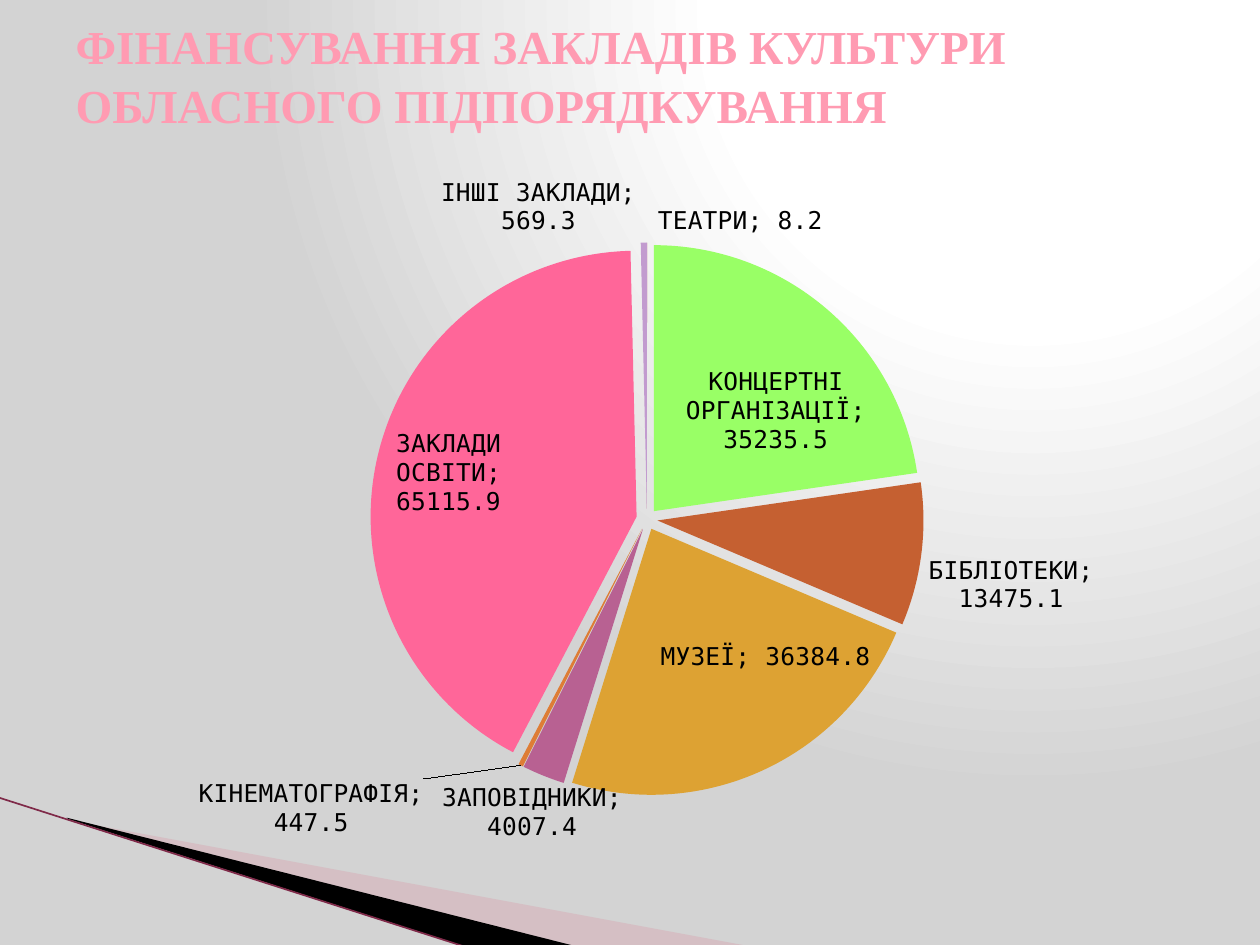
from dataclasses import dataclass

from lxml.etree import SubElement
from pptx import Presentation
from pptx.chart.data import CategoryChartData
from pptx.dml.color import RGBColor as RGB
from pptx.enum.chart import XL_CHART_TYPE as ChartType, XL_LABEL_POSITION as Pos
from pptx.enum.shapes import MSO_CONNECTOR as Conn
from pptx.enum.text import MSO_ANCHOR as Anchor, PP_ALIGN as Align
from pptx.oxml import parse_xml
from pptx.oxml.ns import nsdecls, qn
from pptx.util import Inches, Pt

COLS, ROWS = 100, 75


@dataclass(frozen=True)
class Theme:
    title_font: str = "Times New Roman"
    chart_font: str = "DejaVu Sans Mono"
    title_size: float = 27
    chart_size: float = 18
    label_size: float = 14
    title: str = "FF9BB2"
    text: str = "000000"
    bg_light: str = "FFFFFF"
    bg_dark: str = "D3D3D3"
    wedge_soft: str = "D8A3AF"
    wedge_dark: str = "000000"
    edge: str = "7F2A49"


@dataclass(frozen=True)
class Slice:
    """One pie slice; dx and dy move its label by shares of the chart."""
    name: str
    value: float
    color: str
    pos: Pos = Pos.OUTSIDE_END
    dx: float = 0
    dy: float = 0


SLICES = [
    Slice("ТЕАТРИ", 8.2, "B83D68", dx=0.08),
    Slice("КОНЦЕРТНІ ОРГАНІЗАЦІЇ", 35235.5, "99FF66", Pos.CENTER, 0.03),
    Slice("БІБЛІОТЕКИ", 13475.1, "C56031"),
    Slice("МУЗЕЇ", 36384.8, "DDA233", Pos.CENTER, 0.05, 0.01),
    Slice("ЗАПОВІДНИКИ", 4007.4, "B86192", dx=0.07),
    Slice("КІНЕМАТОГРАФІЯ", 447.5, "DE7D36", dx=-0.08, dy=0.01),
    Slice("ЗАКЛАДИ ОСВІТИ", 65115.9, "FF6699", Pos.CENTER, -0.05, -0.02),
    Slice("ІНШІ ЗАКЛАДИ", 569.3, "C29BCF", dx=-0.09),
]


def layout_xml(inner=False, **shares):
    """Manual chart layout from shares of the chart's size."""
    target = '<c:layoutTarget val="inner"/>' if inner else ""
    modes = '<c:xMode val="edge"/><c:yMode val="edge"/>' if inner else ""
    values = "".join(f'<c:{k} val="{v}"/>' for k, v in shares.items())
    return parse_xml(f'<c:layout {nsdecls("c")}><c:manualLayout>{target}{modes}'
                     f'{values}</c:manualLayout></c:layout>')


class Deck:
    def __init__(self, theme):
        self.theme = theme
        self.prs = Presentation()
        self.prs.slide_width, self.prs.slide_height = Inches(10), Inches(7.5)
        self.slide = self.prs.slides.add_slide(self.prs.slide_layouts[5])

    def x(self, cols):
        return round(self.prs.slide_width * cols / COLS)

    def y(self, rows):
        return round(self.prs.slide_height * rows / ROWS)

    def box(self, x, y, w, h):
        return self.x(x), self.y(y), self.x(w), self.y(h)

    def background(self):
        t = self.theme
        stops = "".join(
            f'<a:gs pos="{pos}000"><a:srgbClr val="{c}"/></a:gs>'
            for pos, c in ((0, t.bg_light), (40, t.bg_light), (100, t.bg_dark)))
        bg = parse_xml(
            f'<p:bg {nsdecls("p", "a")}><p:bgPr><a:gradFill rotWithShape="1">'
            f'<a:gsLst>{stops}</a:gsLst><a:path path="circle">'
            '<a:fillToRect l="65000" t="0" r="0" b="98000"/></a:path>'
            '</a:gradFill><a:effectLst/></p:bgPr></p:bg>')
        self.slide.element.cSld.insert(0, bg)

    def wedge(self, points, color, opacity=100):
        corners = [(self.x(a), self.y(b)) for a, b in points]
        fb = self.slide.shapes.build_freeform(*corners[0])
        fb.add_line_segments(corners[1:], close=True)
        sp = fb.convert_to_shape()
        sp.shadow.inherit = False
        sp.line.fill.background()
        sp.fill.solid()
        sp.fill.fore_color.rgb = RGB.from_string(color)
        if opacity < 100:
            clr = sp.fill._xPr.find(f'.//{qn("a:srgbClr")}')
            SubElement(clr, qn("a:alpha"), val=f"{opacity}000")

    def line(self, start, end, color, width):
        ln = self.slide.shapes.add_connector(
            Conn.STRAIGHT, self.x(start[0]), self.y(start[1]),
            self.x(end[0]), self.y(end[1]))
        ln.line.color.rgb = RGB.from_string(color)
        ln.line.width = Pt(width)
        SubElement(ln._element.spPr, qn("a:effectLst"))

    def font(self, font, name, size, color, bold=False):
        font.name, font.size, font.bold = name, Pt(size), bold
        font.color.rgb = RGB.from_string(color)

    def title(self, text, *cells):
        t, sp = self.theme, self.slide.shapes.title
        sp.left, sp.top, sp.width, sp.height = self.box(*cells)
        tf = sp.text_frame
        tf.word_wrap, tf.vertical_anchor = True, Anchor.MIDDLE
        p = tf.paragraphs[0]
        p.alignment, p.line_spacing = Align.LEFT, 1.05
        r = p.add_run()
        r.text = text
        self.font(r.font, t.title_font, t.title_size, t.title, True)

    def pie(self, slices, *cells, plot, explosion):
        t = self.theme
        data = CategoryChartData(number_format="General")
        data.categories = [s.name for s in slices]
        data.add_series("Series 1", [s.value for s in slices])
        chart = self.slide.shapes.add_chart(
            ChartType.PIE, *self.box(*cells), data).chart
        chart.has_legend = chart.has_title = False
        self.font(chart.font, t.chart_font, t.chart_size, t.text)
        area = chart._chartSpace.chart.plotArea
        for old in area.findall(qn("c:layout")):
            area.remove(old)
        area.insert(0, layout_xml(True, **plot))

        pie = chart.plots[0]
        pie.vary_by_categories = True
        series = pie.series[0]
        labels = series.data_labels
        labels.show_value = labels.show_category_name = True
        self.font(labels.font, t.chart_font, t.label_size, t.text)
        for i, s in enumerate(slices):
            point = series.points[i]
            point.format.fill.solid()
            point.format.fill.fore_color.rgb = RGB.from_string(s.color)
            point.format.line.fill.background()
            self.slice_label(series, i, s)
        ser = series._element
        ser.find(qn("c:dPt")).addprevious(
            parse_xml(f'<c:explosion {nsdecls("c")} val="{explosion}"/>'))
        for dpt in ser.findall(qn("c:dPt")):
            dpt.find(qn("c:spPr")).addprevious(
                parse_xml(f'<c:explosion {nsdecls("c")} val="{explosion}"/>'))

    def slice_label(self, series, index, s):
        t, label = self.theme, series.points[index].data_label
        self.font(label.font, t.chart_font, t.label_size, t.text)
        label.position = s.pos
        dlbl = series._element.xpath(f'.//c:dLbl[c:idx/@val="{index}"]')[0]
        dlbl.find(qn("c:showCatName")).set("val", "1")
        separator = SubElement(dlbl, qn("c:separator"))
        separator.text = "; "
        if s.dx or s.dy:
            dlbl.find(qn("c:idx")).addnext(layout_xml(x=s.dx, y=s.dy))


def main():
    theme = Theme()
    deck = Deck(theme)
    deck.background()
    deck.wedge([(5.5, 65.1), (59.5, 75.1), (45.6, 75.1), (5.5, 65)],
               theme.wedge_soft, 40)
    deck.wedge([(5.3, 64.9), (45.7, 75.1), (37.2, 75.2), (5.4, 65)],
               theme.wedge_dark)
    deck.line((-0.1, 63.3), (37.1, 75.2), theme.edge, 0.95)
    deck.pie(SLICES, 5, 12.5, 92.7, 56.3, explosion=4,
             plot={"x": 0.26, "y": 0.12, "w": 0.48, "h": 0.78})
    deck.title("ФІНАНСУВАННЯ ЗАКЛАДІВ КУЛЬТУРИ ОБЛАСНОГО ПІДПОРЯДКУВАННЯ",
               5, 0, 90, 11.7)
    deck.prs.save("out.pptx")


if __name__ == "__main__":
    main()
